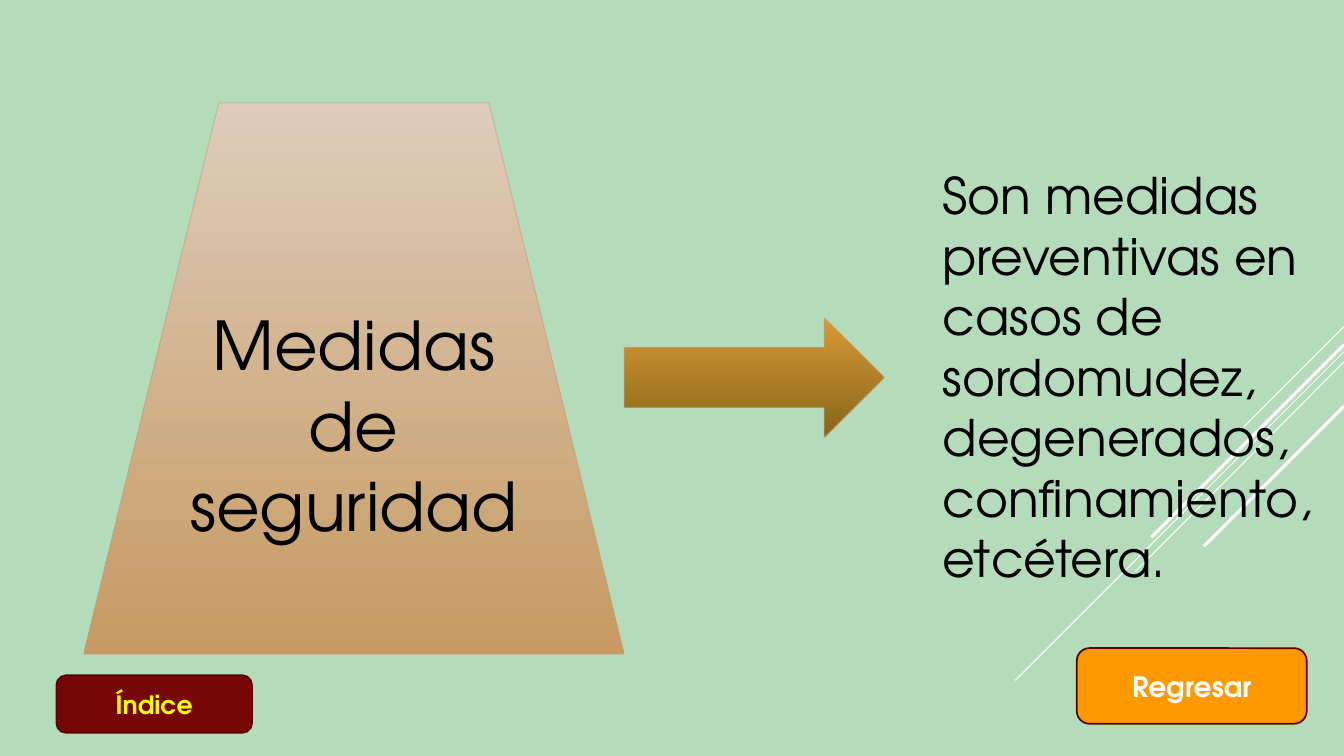
"""Build the slide that defines the safety measures ("Medidas de seguridad")."""
from dataclasses import dataclass
from typing import Optional

from lxml import etree
from pptx import Presentation
from pptx.dml.color import RGBColor
from pptx.enum.shapes import MSO_CONNECTOR, MSO_SHAPE
from pptx.enum.text import MSO_ANCHOR, PP_ALIGN
from pptx.oxml.ns import qn
from pptx.util import Pt

EMU_PER_PX = 9144
SLIDE_WIDTH, SLIDE_HEIGHT = 1333, 750
FONT = "TeX Gyre Adventor"

STRAIGHT = MSO_CONNECTOR.STRAIGHT
TRAPEZOID = MSO_SHAPE.TRAPEZOID
RIGHT_ARROW = MSO_SHAPE.RIGHT_ARROW
ROUNDED = MSO_SHAPE.ROUNDED_RECTANGLE
MIDDLE = MSO_ANCHOR.MIDDLE
LEFT, CENTER = PP_ALIGN.LEFT, PP_ALIGN.CENTER

COLORS = {
    "background": "B4DCBA",
    "white": "FFFFFF",
    "black": "000000",
    "yellow": "FFFF00",
    "sand": "DECCBA",
    "caramel": "C69A61",
    "gold": "D89A39",
    "bronze": "886516",
    "tan": "BCA48A",
    "orange": "FF9900",
    "red": "760603",
    "dark red": "570402",
}


@dataclass(frozen=True)
class Ray:
    """A diagonal decoration line running down from the right edge."""
    top: int
    end_x: int
    end_y: int
    weight: float


@dataclass(frozen=True)
class Label:
    """Text with its look."""
    text: str
    size: int
    color: str
    bold: bool = False
    align: PP_ALIGN = CENTER


@dataclass(frozen=True)
class Block:
    """A filled shape; two fills make a gradient from top to bottom."""
    kind: MSO_SHAPE
    box: tuple[int, int, int, int]
    fills: tuple[str, ...]
    line: str
    weight: float
    line_opacity: int = 100
    label: Optional[Label] = None


RAYS = [
    Ray(324, 1233, 424, 0.75),
    Ray(349, 1007, 675, 0.75),
    Ray(359, 1126, 567, 0.75),
    Ray(342, 1142, 533, 2.25),
    Ray(403, 1194, 542, 2.25),
]

BLOCKS = [
    Block(TRAPEZOID, (83, 102, 536, 547), ("sand", "caramel"), "tan", 0.75, 60,
          Label("Medidas de seguridad", 48, "black")),
    Block(RIGHT_ARROW, (619, 315, 258, 119), ("gold", "bronze"), "tan", 0.75, 60),
    Block(ROUNDED, (1068, 643, 228, 75), ("orange",), "dark red", 1.25,
          label=Label("Regresar", 20, "white", bold=True)),
    Block(ROUNDED, (56, 670, 194, 57), ("red",), "dark red", 1.25,
          label=Label("Índice", 18, "yellow", bold=True)),
]

DEFINITION_BOX = (925, 158, 397, 448)
DEFINITION = Label(
    "Son medidas preventivas en casos de sordomudez, degenerados, confinamiento, etcétera.",
    36, "black", align=LEFT)


def px(length: int) -> int:
    """Turn px into EMU."""
    return length * EMU_PER_PX


def rgb(name: str) -> RGBColor:
    """Look up a colour by name."""
    return RGBColor.from_string(COLORS[name])


def write_label(shape, label: Label) -> None:
    """Write one formatted paragraph into a shape."""
    text_frame = shape.text_frame
    text_frame.word_wrap = True
    text_frame.text = label.text
    paragraph = text_frame.paragraphs[0]
    paragraph.alignment = label.align
    font = paragraph.runs[0].font
    font.name = FONT
    font.size = Pt(label.size)
    font.bold = label.bold
    font.color.rgb = rgb(label.color)


def draw_ray(slide, ray: Ray) -> None:
    """Draw one decoration line."""
    connector = slide.shapes.add_connector(
        STRAIGHT, px(SLIDE_WIDTH), px(ray.top), px(ray.end_x), px(ray.end_y))
    connector.line.color.rgb = rgb("white")
    connector.line.width = Pt(ray.weight)
    etree.SubElement(connector.element.spPr, qn("a:effectLst"))


def draw_block(slide, block: Block) -> None:
    """Draw one filled shape with its outline and label."""
    shape = slide.shapes.add_shape(block.kind, *map(px, block.box))
    shape.shadow.inherit = False
    if len(block.fills) > 1:
        shape.fill.gradient()
        shape.fill.gradient_angle = 270
        for stop, name in zip(shape.fill.gradient_stops, block.fills):
            stop.color.rgb = rgb(name)
    else:
        shape.fill.solid()
        shape.fill.fore_color.rgb = rgb(block.fills[0])
    shape.line.color.rgb = rgb(block.line)
    shape.line.width = Pt(block.weight)
    if block.line_opacity < 100:
        outline = shape.element.spPr.find(qn("a:ln"))
        color = outline.find(f"{qn('a:solidFill')}/{qn('a:srgbClr')}")
        etree.SubElement(color, qn("a:alpha"), val=str(block.line_opacity * 1000))
    if block.label:
        shape.text_frame.vertical_anchor = MIDDLE
        write_label(shape, block.label)


def main() -> None:
    """Build and save the presentation."""
    presentation = Presentation()
    presentation.slide_width = px(SLIDE_WIDTH)
    presentation.slide_height = px(SLIDE_HEIGHT)
    slide = presentation.slides.add_slide(presentation.slide_layouts[6])
    slide.background.fill.solid()
    slide.background.fill.fore_color.rgb = rgb("background")
    for ray in RAYS:
        draw_ray(slide, ray)
    for block in BLOCKS:
        draw_block(slide, block)
    write_label(slide.shapes.add_textbox(*map(px, DEFINITION_BOX)), DEFINITION)
    presentation.save("out.pptx")


if __name__ == "__main__":
    main()
